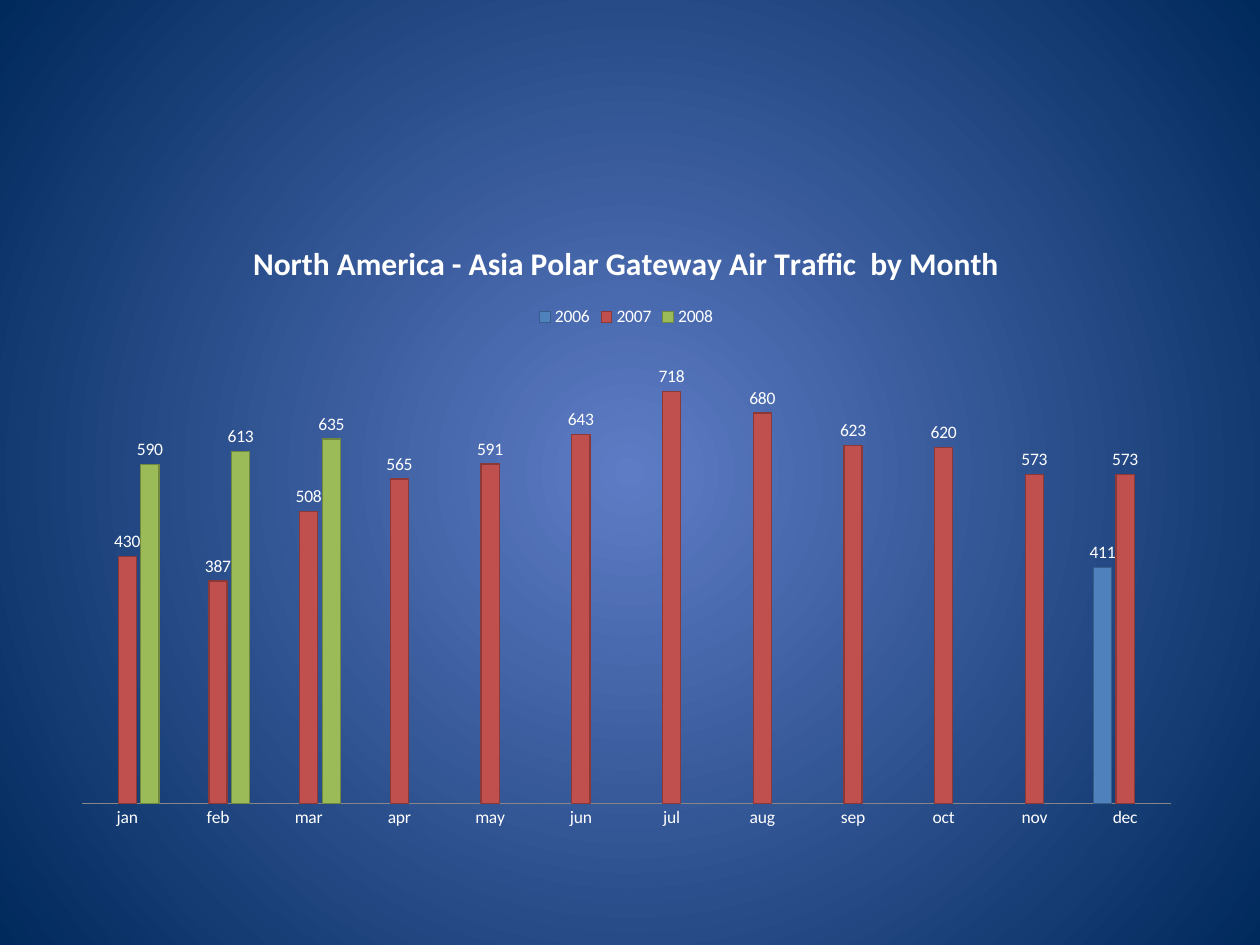
from lxml import etree
from pptx import Presentation
from pptx.chart.data import CategoryChartData
from pptx.dml.color import RGBColor
from pptx.enum.chart import (XL_CHART_TYPE, XL_LABEL_POSITION,
                             XL_LEGEND_POSITION, XL_TICK_MARK)
from pptx.oxml.ns import qn
from pptx.util import Inches, Pt

COLUMN = XL_CHART_TYPE.COLUMN_CLUSTERED
ABOVE = XL_LABEL_POSITION.OUTSIDE_END
TOP = XL_LEGEND_POSITION.TOP
NO_TICK = XL_TICK_MARK.NONE

WHITE = RGBColor(0xFF, 0xFF, 0xFF)
GRAY = RGBColor(0x86, 0x86, 0x86)
GLOW = RGBColor(0x5E, 0x7C, 0xC5)
NAVY = RGBColor(0x00, 0x29, 0x5C)
BLUE = RGBColor(0x4F, 0x81, 0xBD)
RED = RGBColor(0xC0, 0x50, 0x4D)
GREEN = RGBColor(0x9B, 0xBB, 0x59)
DARK_BLUE = RGBColor(0x38, 0x5D, 0x8A)
DARK_RED = RGBColor(0x8C, 0x38, 0x36)
DARK_GREEN = RGBColor(0x71, 0x89, 0x3F)

FONT = "Calibri"
TITLE = "North America - Asia Polar Gateway Air Traffic  by Month"
MONTHS = "jan feb mar apr may jun jul aug sep oct nov dec".split()
# Year, monthly flights, fill, outline
YEARS = [
    ("2006", [None] * 11 + [411], BLUE, DARK_BLUE),
    ("2007", [430, 387, 508, 565, 591, 643, 718, 680, 623, 620, 573, 573],
     RED, DARK_RED),
    ("2008", [590, 613, 635] + [None] * 9, GREEN, DARK_GREEN),
]


class Deck:
    """Holds the text style and the current slide."""

    def __init__(self, slide, face=FONT, color=WHITE):
        self.slide, self.face, self.color = slide, face, color

    def style(self, font, size, bold=False):
        font.name, font.size, font.bold = self.face, Pt(size), bold
        font.color.rgb = self.color

    def glow(self, inner, outer):
        """Fill the background with a round gradient from the centre."""
        fill = self.slide.background.fill
        fill.gradient()
        for stop, color, place in zip(fill.gradient_stops, (inner, outer), (0, 1)):
            stop.color.rgb = color
            stop.position = place
        grad = self.slide.element.find(".//" + qn("a:gradFill"))
        grad.remove(grad.find(qn("a:lin")))
        ring = etree.SubElement(grad, qn("a:path"), path="circle")
        etree.SubElement(ring, qn("a:fillToRect"),
                         dict.fromkeys("ltrb", "50000"))

    def columns(self, title, cats, rows, box):
        """Add a column chart with a title, a top legend and value labels."""
        data = CategoryChartData(number_format="#,##0")
        data.categories = cats
        for name, vals, *_ in rows:
            data.add_series(name, vals)
        chart = self.slide.shapes.add_chart(COLUMN, *box, data).chart
        self.style(chart.font, 10)

        # Title and legend
        chart.has_title = True
        head = chart.chart_title.text_frame
        head.text = title
        self.style(head.paragraphs[0].font, 18, True)
        chart.has_legend = True
        chart.legend.position = TOP
        chart.legend.include_in_layout = False

        # Axes
        months, scale = chart.category_axis, chart.value_axis
        months.major_tick_mark = NO_TICK
        months.format.line.color.rgb = GRAY
        scale.minimum_scale, scale.maximum_scale = 0, 800
        scale.has_major_gridlines = False
        scale.visible = False

        # Columns
        plot = chart.plots[0]
        plot.vary_by_categories = False
        plot.gap_width, plot.overlap = 150, -25
        for bars, (_, _, fill, edge) in zip(plot.series, rows):
            bars.format.fill.solid()
            bars.format.fill.fore_color.rgb = fill
            bars.format.line.color.rgb = edge
            bars.format.line.width = Pt(0.75)
            labels = bars.data_labels
            labels.show_value = True
            labels.position = ABOVE
            self.style(labels.font, 10)


def main():
    prs = Presentation()
    prs.slide_width, prs.slide_height = Inches(10), Inches(7.5)
    deck = Deck(prs.slides.add_slide(prs.slide_layouts[6]))
    deck.glow(GLOW, NAVY)
    box = [Inches(n) for n in (0.47, 1.72, 9, 4.95)]
    deck.columns(TITLE, MONTHS, YEARS, box)
    prs.save("out.pptx")


if __name__ == "__main__":
    main()
